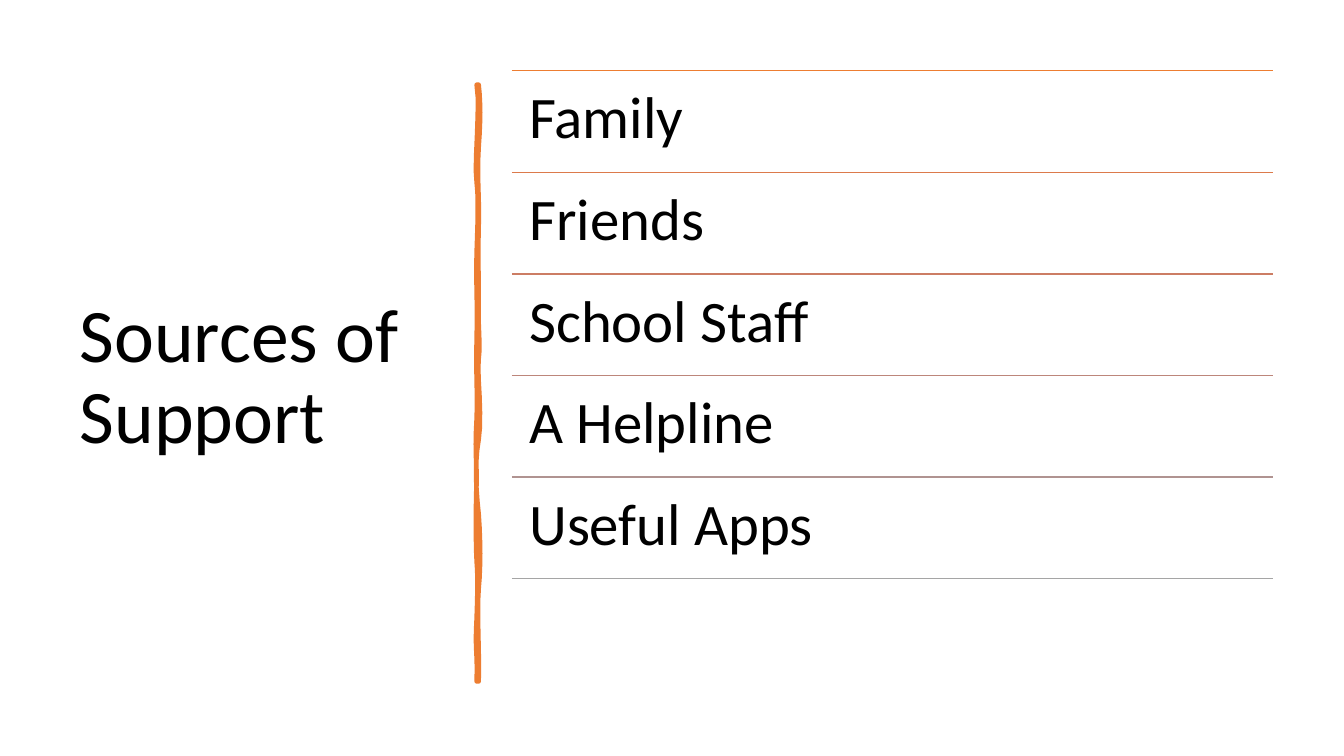
import dataclasses

import pptx
import pptx.dml.color
import pptx.enum.shapes
import pptx.enum.text
import pptx.oxml
import pptx.oxml.ns
import pptx.util
from pptx.util import Cm

FONT = "Calibri"
BLACK = "000000"
ORANGE = "ED7D31"
LIST_LEFT, LIST_TOP, LIST_WIDTH, ROW_HEIGHT = 12.9, 1.78, 19.18, 2.56
CURVE_STEPS = 6
UNITS_PER_INCH = 1000

# Outline of the brush stroke in inches: a start, then two handles and an end per curve.
BRUSH_START = (4.75, 0.84)
BRUSH_CURVES = [
    ((4.77, 1.02), (4.77, 1.19), (4.75, 1.46)),
    ((4.73, 1.73), (4.76, 1.95), (4.75, 2.26)),
    ((4.74, 2.57), (4.75, 2.62), (4.75, 2.94)),
    ((4.74, 3.25), (4.77, 3.42), (4.75, 3.56)),
    ((4.73, 3.70), (4.79, 4.14), (4.75, 4.36)),
    ((4.71, 4.57), (4.72, 4.84), (4.75, 5.10)),
    ((4.77, 5.36), (4.77, 5.64), (4.75, 5.84)),
    ((4.73, 6.03), (4.76, 6.50), (4.75, 6.76)),
    ((4.74, 6.76), (4.73, 6.76), (4.73, 6.76)),
    ((4.74, 6.46), (4.71, 6.44), (4.73, 6.13)),
    ((4.74, 5.83), (4.74, 5.70), (4.73, 5.57)),
    ((4.72, 5.44), (4.72, 4.95), (4.73, 4.77)),
    ((4.73, 4.59), (4.71, 4.45), (4.73, 4.15)),
    ((4.74, 3.86), (4.72, 3.73), (4.73, 3.35)),
    ((4.74, 2.98), (4.72, 2.81), (4.73, 2.50)),
    ((4.74, 2.18), (4.75, 2.00), (4.73, 1.81)),
    ((4.70, 1.63), (4.77, 1.04), (4.73, 0.84)),
]


@dataclasses.dataclass
class Source:
    name: str
    rule_color: str


SOURCES = [
    Source("Family", ORANGE),
    Source("Friends", "DC7A4B"),
    Source("School Staff", "CC7D64"),
    Source("A Helpline", "BD867B"),
    Source("Useful Apps", "B09391"),
]
LAST_RULE_COLOR = "A5A5A5"


def rgb(color: str) -> pptx.dml.color.RGBColor:
    return pptx.dml.color.RGBColor.from_string(color)


def write(tf, text: str, *, size: float, color: str = BLACK,
          inset_x: float = 0.25, inset_y: float = 0.13,
          anchor=pptx.enum.text.MSO_ANCHOR.TOP) -> None:
    """Put one left-aligned paragraph in a text frame; insets are in cm."""
    tf.word_wrap = True
    tf.auto_size = pptx.enum.text.MSO_AUTO_SIZE.NONE
    tf.vertical_anchor = anchor
    tf.margin_left = tf.margin_right = Cm(inset_x)
    tf.margin_top = tf.margin_bottom = Cm(inset_y)
    p = tf.paragraphs[0]
    p.alignment = pptx.enum.text.PP_ALIGN.LEFT
    p.line_spacing = 0.9
    r = p.add_run()
    r.text = text
    r.font.name = FONT
    r.font.size = pptx.util.Pt(size)
    r.font.color.rgb = rgb(color)


def add_rule(s, top: float, color: str) -> None:
    rule = s.shapes.add_connector(
        pptx.enum.shapes.MSO_CONNECTOR.STRAIGHT,
        Cm(LIST_LEFT), Cm(top), Cm(LIST_LEFT + LIST_WIDTH), Cm(top))
    rule.line.color.rgb = rgb(color)
    rule.line.width = pptx.util.Pt(1)
    rule._element.spPr.append(pptx.oxml.parse_xml(
        f'<a:effectLst {pptx.oxml.ns.nsdecls("a")}/>'))


def flatten(start: tuple, curves: list) -> list:
    """Turn a chain of cubic curves into points, in freeform units."""
    points = [tuple(UNITS_PER_INCH * a for a in start)]
    for c1, c2, end in curves:
        for step in range(1, CURVE_STEPS + 1):
            t = step / CURVE_STEPS
            u = 1 - t
            points.append(tuple(
                UNITS_PER_INCH * (u**3 * a + 3 * u**2 * t * b + 3 * u * t**2 * c + t**3 * d)
                for a, b, c, d in zip(start, c1, c2, end)))
        start = end
    return points


def add_brush_stroke(s) -> None:
    first, *others = flatten(BRUSH_START, BRUSH_CURVES)
    builder = s.shapes.build_freeform(*first, scale=Cm(2.54) / UNITS_PER_INCH)
    builder.add_line_segments(others, close=True)
    sp = builder.convert_to_shape()
    sp.shadow.inherit = False
    sp.fill.solid()
    sp.fill.fore_color.rgb = rgb(ORANGE)
    sp.line.color.rgb = rgb(ORANGE)
    sp.line.width = pptx.util.Pt(3.25)


def main() -> None:
    prs = pptx.Presentation()
    prs.slide_width, prs.slide_height = Cm(33.87), Cm(19.05)
    s = prs.slides.add_slide(prs.slide_layouts[5])

    title = s.shapes.title
    title.left, title.top, title.width, title.height = Cm(1.76), Cm(1.78), Cm(9.5), Cm(15.52)
    write(title.text_frame, "Sources of Support", size=54,
          anchor=pptx.enum.text.MSO_ANCHOR.MIDDLE)

    add_brush_stroke(s)

    for i, source in enumerate(SOURCES):
        top = LIST_TOP + i * ROW_HEIGHT
        add_rule(s, top, source.rule_color)
        box = s.shapes.add_textbox(Cm(LIST_LEFT), Cm(top), Cm(LIST_WIDTH), Cm(ROW_HEIGHT))
        write(box.text_frame, source.name, size=42, inset_x=0.44, inset_y=0.44)
    add_rule(s, LIST_TOP + len(SOURCES) * ROW_HEIGHT, LAST_RULE_COLOR)

    prs.save("out.pptx")


if __name__ == "__main__":
    main()
